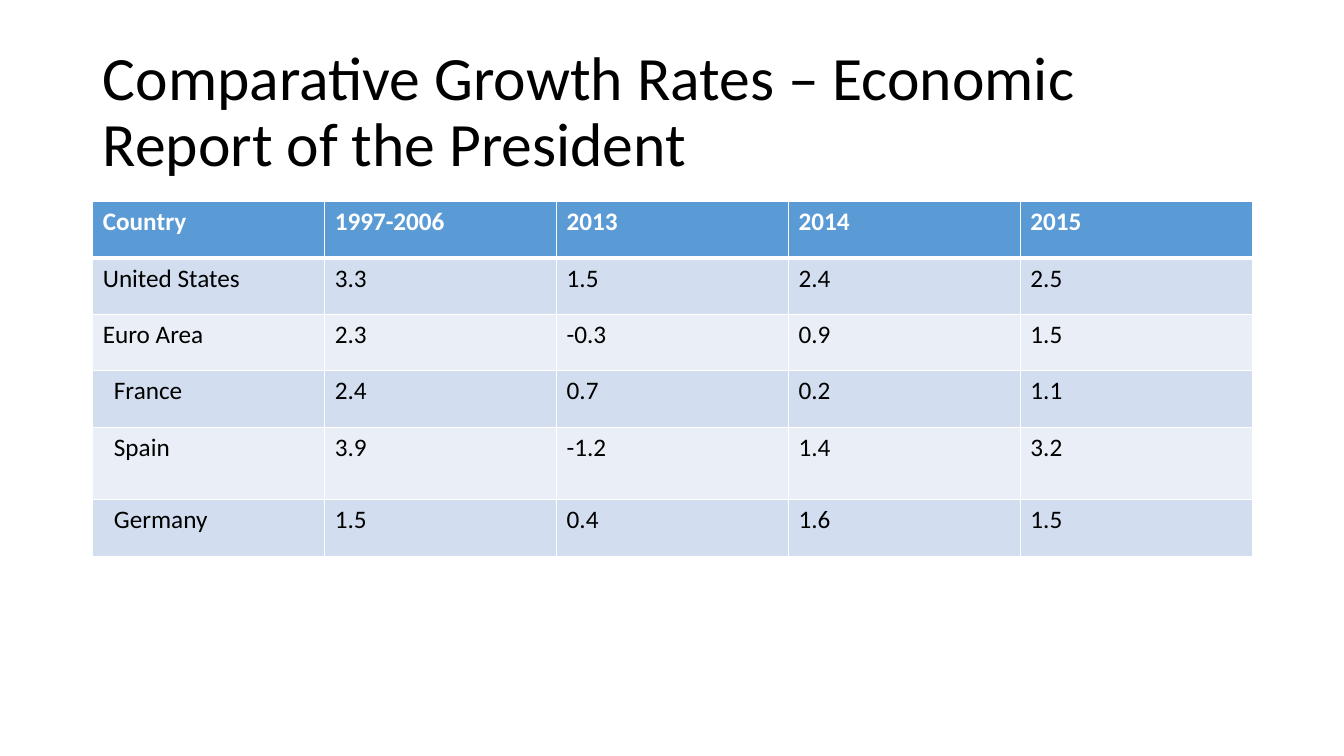
from dataclasses import dataclass

from lxml.etree import SubElement
from pptx import Presentation
from pptx.dml.color import RGBColor as RGB
from pptx.enum.text import MSO_ANCHOR as Anchor, MSO_AUTO_SIZE as AutoSize, PP_ALIGN as Align
from pptx.oxml.ns import qn
from pptx.util import Inches, Pt


@dataclass(frozen=True)
class Theme:
    font: str = "Calibri"
    title_size: int = 44
    cell_size: int = 18
    text: str = "000000"
    white: str = "FFFFFF"
    header: str = "5B9BD5"
    bands: tuple = ("D2DEEF", "EAEFF7")


theme = Theme()


def write(tf, text, size=theme.cell_size, color=theme.text, bold=False, spacing=None):
    p = tf.paragraphs[0]
    p.alignment = Align.LEFT
    p.line_spacing = spacing
    r = p.add_run()
    r.text = text
    r.font.name = theme.font
    r.font.size = Pt(size)
    r.font.bold = bold
    r.font.color.rgb = RGB.from_string(color)


def set_borders(cell, **widths):
    tc_pr = cell._tc.get_or_add_tcPr()
    for side in ("L", "R", "T", "B"):
        ln = SubElement(tc_pr, qn(f"a:ln{side}"), w=str(Pt(widths.get(side, 1))))
        fill = SubElement(ln, qn("a:solidFill"))
        SubElement(fill, qn("a:srgbClr"), val=theme.white)


prs = Presentation()
prs.slide_width, prs.slide_height = Inches(13.33), Inches(7.5)
s = prs.slides.add_slide(prs.slide_layouts[5])

# Title
title = s.shapes.title
title.left, title.top = Inches(0.92), Inches(0.4)
title.width, title.height = Inches(11.5), Inches(1.45)
tf = title.text_frame
tf.word_wrap = True
tf.auto_size = AutoSize.NONE
tf.vertical_anchor = Anchor.MIDDLE
write(tf, "Comparative Growth Rates – Economic Report of the President",
      size=theme.title_size, spacing=0.9)

# Growth rates
growth = [
    ("Country", "1997-2006", "2013", "2014", "2015"),
    ("United States", "3.3", "1.5", "2.4", "2.5"),
    ("Euro Area", "2.3", "-0.3", "0.9", "1.5"),
    ("France", "2.4", "0.7", "0.2", "1.1"),
    ("Spain", "3.9", "-1.2", "1.4", "3.2"),
    ("Germany", "1.5", "0.4", "1.6", "1.5"),
]
euro_members = ("France", "Spain", "Germany")
row_heights = (0.56, 0.56, 0.56, 0.56, 0.72, 0.56)

# Table
table = s.shapes.add_table(len(growth), len(growth[0]), Inches(0.92), Inches(2),
                           Inches(11.5), Inches(sum(row_heights))).table
for i, (values, height) in enumerate(zip(growth, row_heights)):
    table.rows[i].height = Inches(height)
    is_header = i == 0
    fill = theme.header if is_header else theme.bands[(i - 1) % 2]
    for j, value in enumerate(values):
        cell = table.cell(i, j)
        if value in euro_members:
            cell.margin_left = Inches(0.21)
        # Thick rule between the header and the first row
        set_borders(cell, T=3 if i == 1 else 1, B=3 if is_header else 1)
        cell.fill.solid()
        cell.fill.fore_color.rgb = RGB.from_string(fill)
        write(cell.text_frame, value, bold=is_header,
              color=theme.white if is_header else theme.text)

prs.save("out.pptx")
